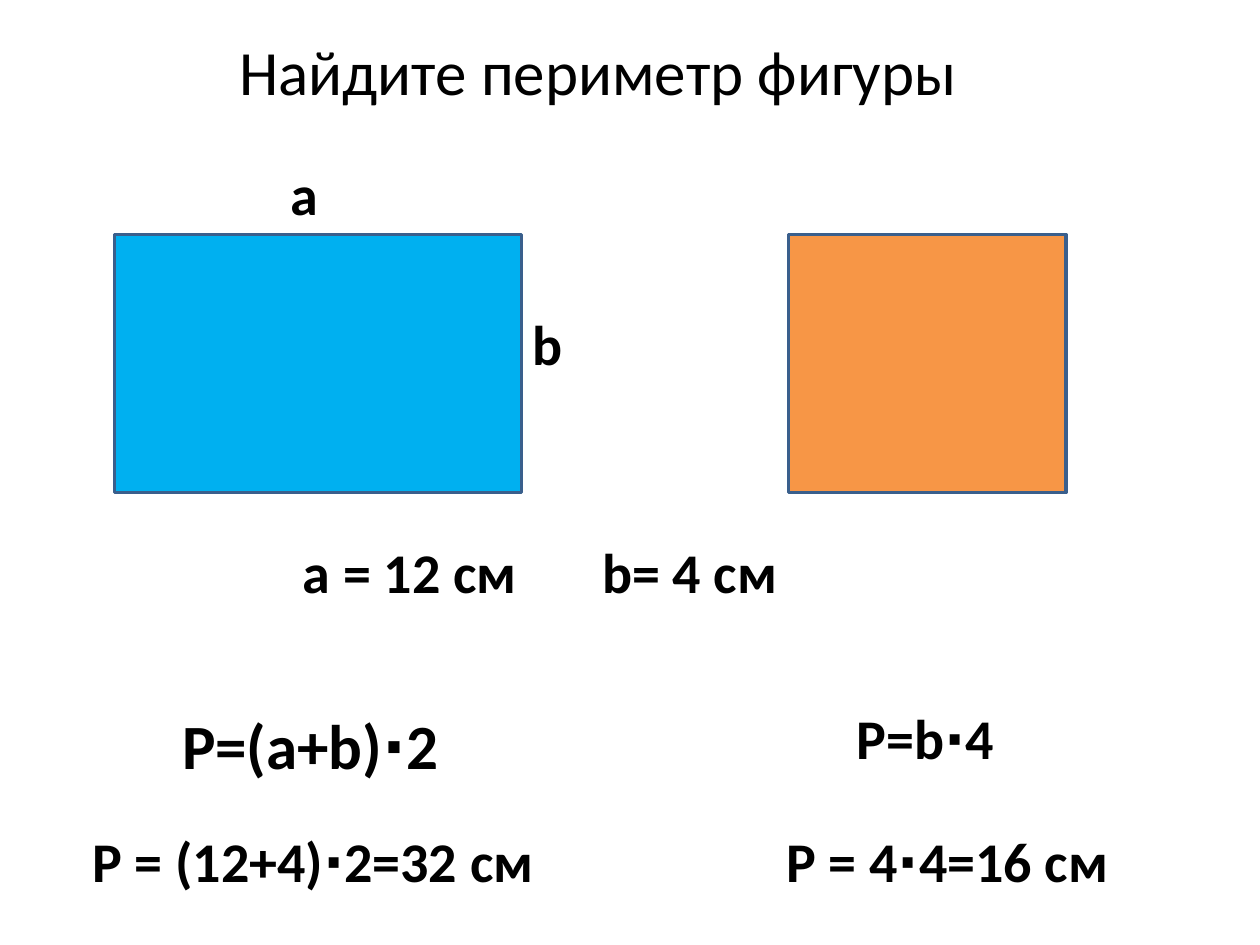
from lxml import etree
from pptx import Presentation
from pptx.dml.color import RGBColor
from pptx.enum.shapes import MSO_SHAPE as Shape
from pptx.enum.text import MSO_ANCHOR as Anchor, MSO_AUTO_SIZE as AutoSize, PP_ALIGN as Align
from pptx.oxml.ns import qn
from pptx.util import Pt


def color(value):
    return RGBColor.from_string(value)


def write(box, text, at, size=32, bold=True, indent=0, tab=None):
    box.left, box.top, box.width, box.height = [Pt(length) for length in at]
    frame = box.text_frame
    frame.word_wrap = True
    frame.auto_size = AutoSize.NONE
    frame.vertical_anchor = Anchor.TOP
    frame.margin_left = Pt(7.2 + indent)
    para = frame.paragraphs[0]
    para.alignment = Align.LEFT
    if tab:
        stops = etree.SubElement(para._p.get_or_add_pPr(), qn("a:tabLst"))
        etree.SubElement(stops, qn("a:tab"), pos=str(Pt(tab)), algn="l")
    span = para.add_run()
    span.text = text
    span.font.name = "Calibri"
    span.font.size = Pt(size)
    span.font.bold = bold
    span.font.color.rgb = color("000000")


deck = Presentation()
deck.slide_width, deck.slide_height = Pt(720), Pt(540)
page = deck.slides.add_slide(deck.slide_layouts[5])

# Title
write(page.shapes.title, "Найдите периметр фигуры", (105.1, 15.1, 476, 51),
      size=36, bold=False, indent=24.4)

# Rectangle and square
for left, width, fill in [(65.5, 232.6, "00B0F0"), (450.7, 158.4, "F79646")]:
    figure = page.shapes.add_shape(Shape.RECTANGLE, Pt(left), Pt(133.9), Pt(width), Pt(147.6))
    figure.shadow.inherit = False
    figure.fill.solid()
    figure.fill.fore_color.rgb = color(fill)
    figure.line.color.rgb = color("3A5F8C")
    figure.line.width = Pt(2)

# Side labels, given lengths, formulas and answers
labels = [
    ("a", (93.6, 87.8, 130.3, 46), {"indent": 65}),
    ("b", (297.4, 173.5, 33.8, 46), {}),
    ("a = 12 см\tb= 4 см", (93.6, 303.8, 419.8, 46), {"indent": 72.3, "tab": 171}),
    ("P=(a+b)∙2", (80.6, 400.3, 221, 51), {"size": 36, "indent": 16.3}),
    ("P=b∙4", (453.6, 398.2, 158.4, 46), {"indent": 28.9}),
    ("Р = (12+4)∙2=32 см", (31, 468.7, 283.7, 46), {"indent": 14.5}),
    ("Р = 4∙4=16 см", (427.7, 468.7, 215.3, 46), {"indent": 14.5}),
]
for text, at, style in labels:
    write(page.shapes.add_textbox(0, 0, 0, 0), text, at, **style)

deck.save("out.pptx")
